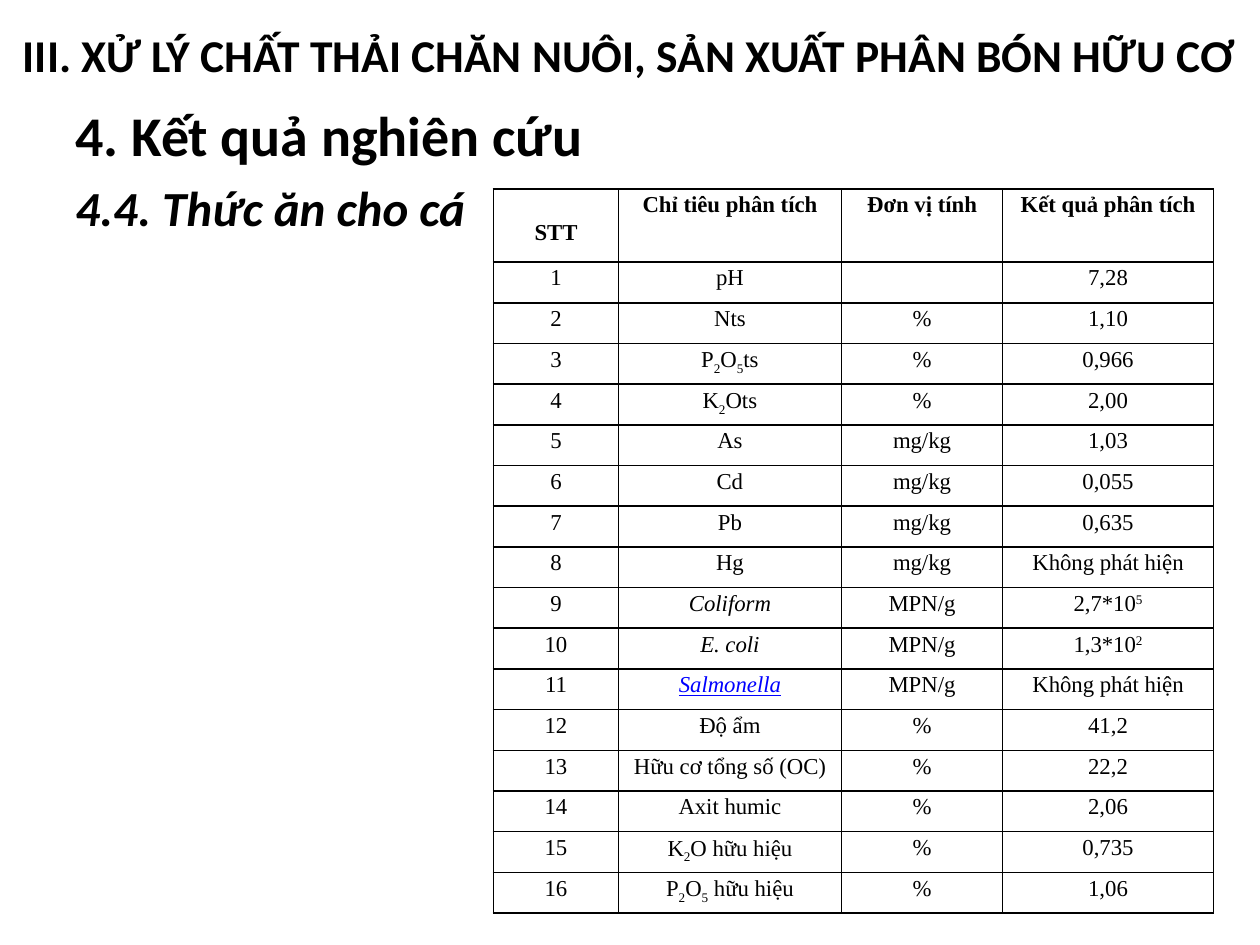
"""Build the slide on fish feed analysis results, with its table of indicators."""
import pptx
import pptx.dml.color
import pptx.enum.text
import pptx.oxml
import pptx.oxml.ns
import pptx.util

Pt = pptx.util.Pt
ALIGN = pptx.enum.text.PP_ALIGN
ANCHOR = pptx.enum.text.MSO_ANCHOR

COLORS = {"text": "000000", "link": "0000FF", "border": "000000"}
TITLE = "III. XỬ LÝ CHẤT THẢI CHĂN NUÔI, SẢN XUẤT PHÂN BÓN HỮU CƠ"
HEADINGS = [
    ("4. Kết quả nghiên cứu", {"size": Pt(32), "bold": True}),
    ("4.4. Thức ăn cho cá", {"size": Pt(28), "bold": True, "italic": True}),
]
HEADER = ["STT", "Chỉ tiêu phân tích", "Đơn vị tính", "Kết quả phân tích"]
RESULTS = [
    ("pH", "", "7,28"),
    ("Nts", "%", "1,10"),
    ("P|_2|O|_5|ts", "%", "0,966"),
    ("K|_2|Ots", "%", "2,00"),
    ("As", "mg/kg", "1,03"),
    ("Cd", "mg/kg", "0,055"),
    ("Pb", "mg/kg", "0,635"),
    ("Hg", "mg/kg", "Không phát hiện"),
    ("Coliform", "MPN/g", "2,7*10|^5"),
    ("E. coli", "MPN/g", "1,3*10|^2"),
    ("Salmonella", "MPN/g", "Không phát hiện"),
    ("Độ ẩm", "%", "41,2"),
    ("Hữu cơ tổng số (OC)", "%", "22,2"),
    ("Axit humic", "%", "2,06"),
    ("K|_2|O hữu hiệu", "%", "0,735"),
    ("P|_2|O|_5| hữu hiệu", "%", "1,06"),
]
SPECIAL = {
    "Coliform": {"italic": True},
    "E. coli": {"italic": True},
    "Salmonella": {"italic": True, "underline": True, "color": "link"},
}
BASELINES = {"_": "-25000", "^": "30000"}
COL_WIDTHS = [71.4, 127.4, 92.2, 120.4]
TABLE_LEFT, TABLE_TOP, TABLE_HEIGHT, HEADER_HEIGHT = 282, 108, 414, 41.8
STT_DROP = 16


def set_attrs(obj, values):
    for name, value in values.items():
        setattr(obj, name, value)


def add_run(p, text, color="text", **font):
    r = p.add_run()
    r.text = text
    set_attrs(r.font, font)
    r.font.color.rgb = pptx.dml.color.RGBColor.from_string(COLORS[color])
    return r


def add_box(slide, left, top, width, height, anchor):
    tf = slide.shapes.add_textbox(Pt(left), Pt(top), Pt(width), Pt(height)).text_frame
    set_attrs(tf, {"word_wrap": True, "vertical_anchor": anchor})
    return tf


def add_borders(cell):
    tcPr = cell._tc.get_or_add_tcPr()
    for side in "LRTB":
        tcPr.append(pptx.oxml.parse_xml(
            f'<a:ln{side} {pptx.oxml.ns.nsdecls("a")} w="{Pt(1)}"><a:solidFill>'
            f'<a:srgbClr val="{COLORS["border"]}"/></a:solidFill></a:ln{side}>'))


def fill_cell(cell, text, bold):
    set_attrs(cell, {"margin_left": Pt(5), "margin_right": Pt(5),
                     "margin_top": Pt(STT_DROP if text == "STT" else 0), "margin_bottom": Pt(0)})
    add_borders(cell)
    cell.fill.background()
    if not text:
        return
    p = cell.text_frame.paragraphs[0]
    set_attrs(p, {"alignment": ALIGN.CENTER, "line_spacing": 1.15, "space_after": Pt(6)})
    font = {"name": "Times New Roman", "size": Pt(13), "bold": bold, **SPECIAL.get(text, {})}
    for part in text.split("|"):
        r = add_run(p, part.lstrip("_^"), **font)
        if part[0] in BASELINES:
            r._r.get_or_add_rPr().set("baseline", BASELINES[part[0]])


def add_results_table(slide):
    rows = [HEADER] + [(str(n), *result) for n, result in enumerate(RESULTS, 1)]
    table = slide.shapes.add_table(
        len(rows), len(HEADER), Pt(TABLE_LEFT), Pt(TABLE_TOP),
        Pt(sum(COL_WIDTHS)), Pt(TABLE_HEIGHT)).table
    set_attrs(table, {"first_row": False, "horz_banding": False})
    for column, width in zip(table.columns, COL_WIDTHS):
        column.width = Pt(width)
    row_height = (TABLE_HEIGHT - HEADER_HEIGHT) / len(RESULTS)
    for i, row in enumerate(rows):
        table.rows[i].height = Pt(row_height if i else HEADER_HEIGHT)
        for j, text in enumerate(row):
            fill_cell(table.cell(i, j), text, bold=i == 0)


def main():
    prs = pptx.Presentation()
    set_attrs(prs, {"slide_width": Pt(720), "slide_height": Pt(540)})
    slide = prs.slides.add_slide(prs.slide_layouts[6])

    p = add_box(slide, 0, 0, 720, 62.6, ANCHOR.MIDDLE).paragraphs[0]
    p.alignment = ALIGN.CENTER
    add_run(p, TITLE, name="Calibri", size=Pt(26), bold=True)

    tf = add_box(slide, 36, 54, 666, 450, ANCHOR.TOP)
    for i, (text, font) in enumerate(HEADINGS):
        p = tf.add_paragraph() if i else tf.paragraphs[0]
        if i:
            p.space_before = Pt(5.6)
        add_run(p, text, name="Calibri", **font)

    add_results_table(slide)
    prs.save("out.pptx")


if __name__ == "__main__":
    main()
